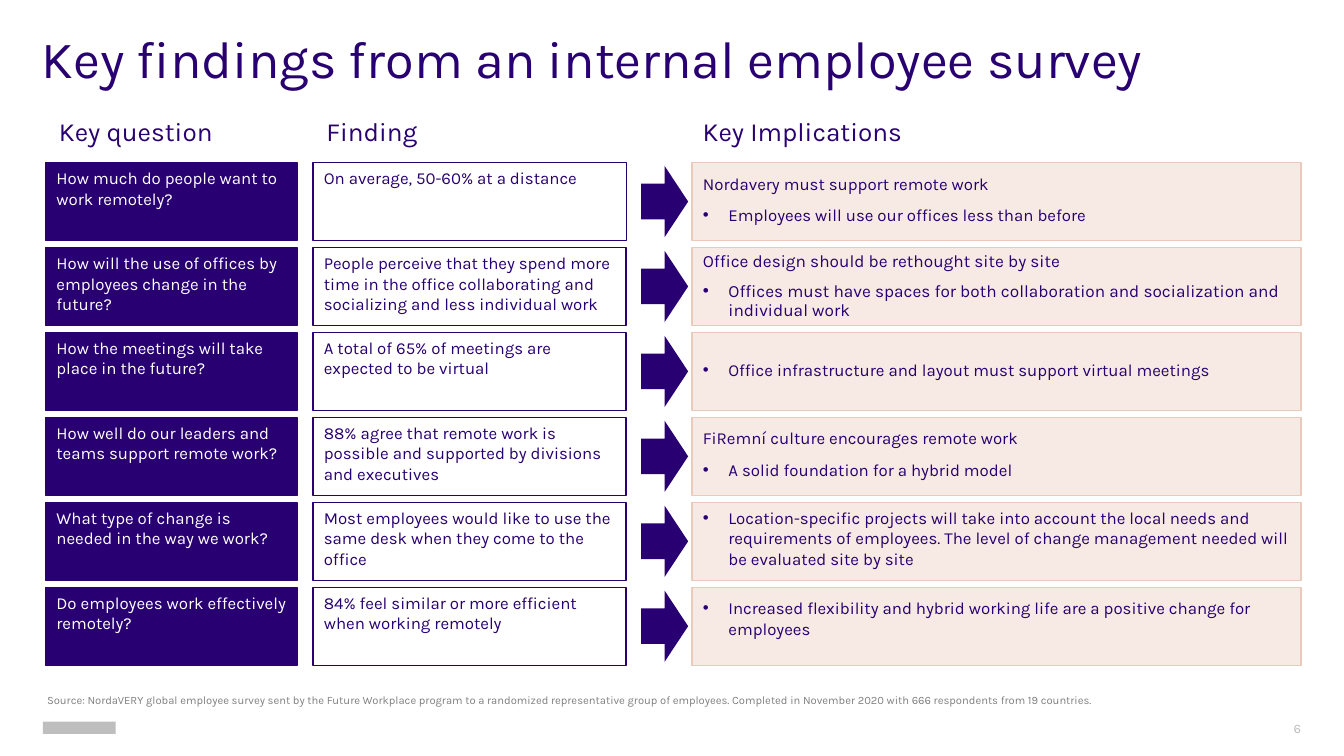
import pptx
import pptx.util
import pptx.dml.color
import pptx.enum.shapes
import pptx.enum.text
import pptx.oxml
from lxml import etree

Inches, Pt = pptx.util.Inches, pptx.util.Pt
ALIGN, ANCHOR = pptx.enum.text.PP_ALIGN, pptx.enum.text.MSO_ANCHOR
SHAPES = pptx.enum.shapes.MSO_SHAPE
qualified = pptx.oxml.ns.qn

# Content
TITLE = "Key findings from an internal employee survey"
SOURCE = ("Source: NordaVERY global employee survey sent by the Future Workplace program to a "
          "randomized representative group of employees. Completed in November 2020 with 666 "
          "respondents from 19 countries.")
PAGE_NUMBER = "6"
HEADINGS = [("Key question", 0.34), ("Finding", 2.33), ("Key Implications", 5.13)]
# question, finding, implication lead, implication bullet, then top inset, line spacing, size
FINDINGS = [
    ("How much do people want to work remotely?",
     "On average, 50-60% at a distance",
     "Nordavery must support remote work",
     "Employees will use our offices less than before", 0.08, 1.0, 9),
    ("How will the use of offices by employees change in the future?",
     "People perceive that they spend more time in the office collaborating and socializing "
     "and less individual work",
     "Office design should be rethought site by site",
     "Offices must have spaces for both collaboration and socialization and individual work",
     0.04, 0.9, 9.2),
    ("How the meetings will take place in the future?",
     "A total of 65% of meetings are expected to be virtual",
     None, "Office infrastructure and layout must support virtual meetings", 0.2, 1.0, 9),
    ("How well do our leaders and teams support remote work?",
     "88% agree that remote work is possible and supported by divisions and executives",
     "FiRemní culture encourages remote work",
     "A solid foundation for a hybrid model", 0.08, 1.0, 9),
    ("What type of change is needed in the way we work?",
     "Most employees would like to use the same desk when they come to the office",
     None, "Location-specific projects will take into account the local needs and requirements "
     "of employees. The level of change management needed will be evaluated site by site",
     0.04, 1.0, 9),
    ("Do employees work effectively remotely?",
     "84% feel similar or more efficient when working remotely",
     None, "Increased flexibility and hybrid working life are a positive change for employees",
     0.08, 1.0, 9),
]

# Look and grid
COLORS = {"purple": "280071", "white": "FFFFFF", "blush": "F7EAE4", "rose": "EACBBB",
          "silver": "BEBEBE", "grey": "808080"}
FONT = "Karla"
# left, width, fill, line, text colour, placeholder used in the first row
COLUMNS = [(0.34, 1.87, "purple", "purple", "white", 1),
           (2.33, 2.33, None, "purple", "purple", 2),
           (5.15, 4.53, "blush", "rose", "purple", 4)]
FIRST_TOP, LAST_TOP, ROW_HEIGHT = 1.21, 4.37, 0.58
ROW_PITCH = (LAST_TOP - FIRST_TOP) / (len(FINDINGS) - 1)
ARROW_LEFT, ARROW_WIDTH, ARROW_HEIGHT = 4.77, 0.35, 0.53
HANGING = 0.19


def color(name):
    return pptx.dml.color.RGBColor.from_string(COLORS[name])


def place(shape, left, top, width, height):
    shape.left, shape.top = Inches(left), Inches(top)
    shape.width, shape.height = Inches(width), Inches(height)


def paint(shape, fill, line=None):
    shape.shadow.inherit = False
    style = shape._element.find(qualified("p:style"))
    if style is not None:
        shape._element.remove(style)
    if fill:
        shape.fill.solid()
        shape.fill.fore_color.rgb = color(fill)
    else:
        shape.fill.background()
    if line:
        shape.line.color.rgb = color(line)
        shape.line.width = Pt(0.75)
    else:
        shape.line.fill.background()


def set_bullet(paragraph, bulleted):
    properties = paragraph._p.get_or_add_pPr()
    indent = Inches(HANGING) if bulleted else 0
    properties.set("marL", str(indent))
    properties.set("indent", str(-indent))
    if bulleted:
        etree.SubElement(properties, qualified("a:buFont")).set("typeface", "Arial")
        etree.SubElement(properties, qualified("a:buChar")).set("char", "•")
    else:
        etree.SubElement(properties, qualified("a:buNone"))


def write(shape, items, size, text_color, insets=(0, 0, 0, 0), spacing=1.0,
          before=0, align=ALIGN.LEFT, anchor=ANCHOR.TOP):
    """Fill a shape with (text, bulleted) paragraphs; insets are left, top, right, bottom."""
    frame = shape.text_frame
    frame.word_wrap = True
    frame.auto_size = pptx.enum.text.MSO_AUTO_SIZE.NONE
    frame.vertical_anchor = anchor
    (frame.margin_left, frame.margin_top,
     frame.margin_right, frame.margin_bottom) = map(Inches, insets)
    for index, (text, bulleted) in enumerate(items):
        paragraph = frame.add_paragraph() if index else frame.paragraphs[0]
        paragraph.text = text
        set_bullet(paragraph, bulleted)
        paragraph.alignment = align
        paragraph.line_spacing = spacing
        paragraph.space_before = Pt(before)
        paragraph.font.name = FONT
        paragraph.font.size = Pt(size)
        paragraph.font.bold = False
        paragraph.font.color.rgb = color(text_color)


def add_label(slide, text, box, size, text_color, **options):
    label = slide.shapes.add_textbox(*map(Inches, box))
    write(label, [(text, False)], size, text_color, **options)


def add_row(slide, row, finding):
    question, answer, lead, point, inset, spacing, point_size = finding
    top = FIRST_TOP + row * ROW_PITCH
    implications = [(lead, False)] if lead else []
    cells = [([(question, False)], 0.04, 1.0, 9),
             ([(answer, False)], 0.04, 1.0, 9),
             (implications + [(point, True)], inset, spacing, point_size)]
    for column, (items, top_inset, line_spacing, size) in zip(COLUMNS, cells):
        left, width, fill, line, text_color, placeholder = column
        if row == 0:
            box = slide.placeholders[placeholder]
        else:
            box = slide.shapes.add_shape(SHAPES.RECTANGLE, 0, 0, 0, 0)
        place(box, left, top, width, ROW_HEIGHT)
        paint(box, fill, line)
        write(box, items, size, text_color, (0.08, top_inset, 0.08, 0.04), line_spacing, before=6)
    arrow_top = top + (ROW_HEIGHT - ARROW_HEIGHT) / 2
    arrow = slide.shapes.add_shape(SHAPES.RIGHT_ARROW, 0, 0, 0, 0)
    place(arrow, ARROW_LEFT, arrow_top, ARROW_WIDTH, ARROW_HEIGHT)
    paint(arrow, "purple")


def main():
    presentation = pptx.Presentation()
    presentation.slide_width = Inches(10)
    presentation.slide_height = presentation.slide_width * 9 // 16
    slide = presentation.slides.add_slide(presentation.slide_layouts[4])
    unused = slide.placeholders[3]._element
    unused.getparent().remove(unused)

    # Title and column headings
    place(slide.shapes.title, 0.31, 0.25, 9.37, 0.49)
    write(slide.shapes.title, [(TITLE, False)], 28, "purple", spacing=0.9)
    for heading, left in HEADINGS:
        add_label(slide, heading, (left, 0.81, 1.87, 0.32), 14, "purple",
                  insets=(0.1, 0.05, 0.1, 0.05))

    # Question, finding, arrow and implication rows
    for row, finding in enumerate(FINDINGS):
        add_row(slide, row, finding)

    # Footer
    add_label(slide, SOURCE, (0.31, 5.12, 9.62, 0.18), 6, "grey", insets=(0.04,) * 4)
    add_label(slide, PAGE_NUMBER, (9.33, 5.35, 0.35, 0.14), 7, "silver",
              align=ALIGN.RIGHT, anchor=ANCHOR.MIDDLE)
    emblem = slide.shapes.add_shape(SHAPES.RECTANGLE, 0, 0, 0, 0)
    place(emblem, 0.32, 5.37, 0.54, 0.09)
    paint(emblem, "silver")

    presentation.save("out.pptx")


if __name__ == "__main__":
    main()
